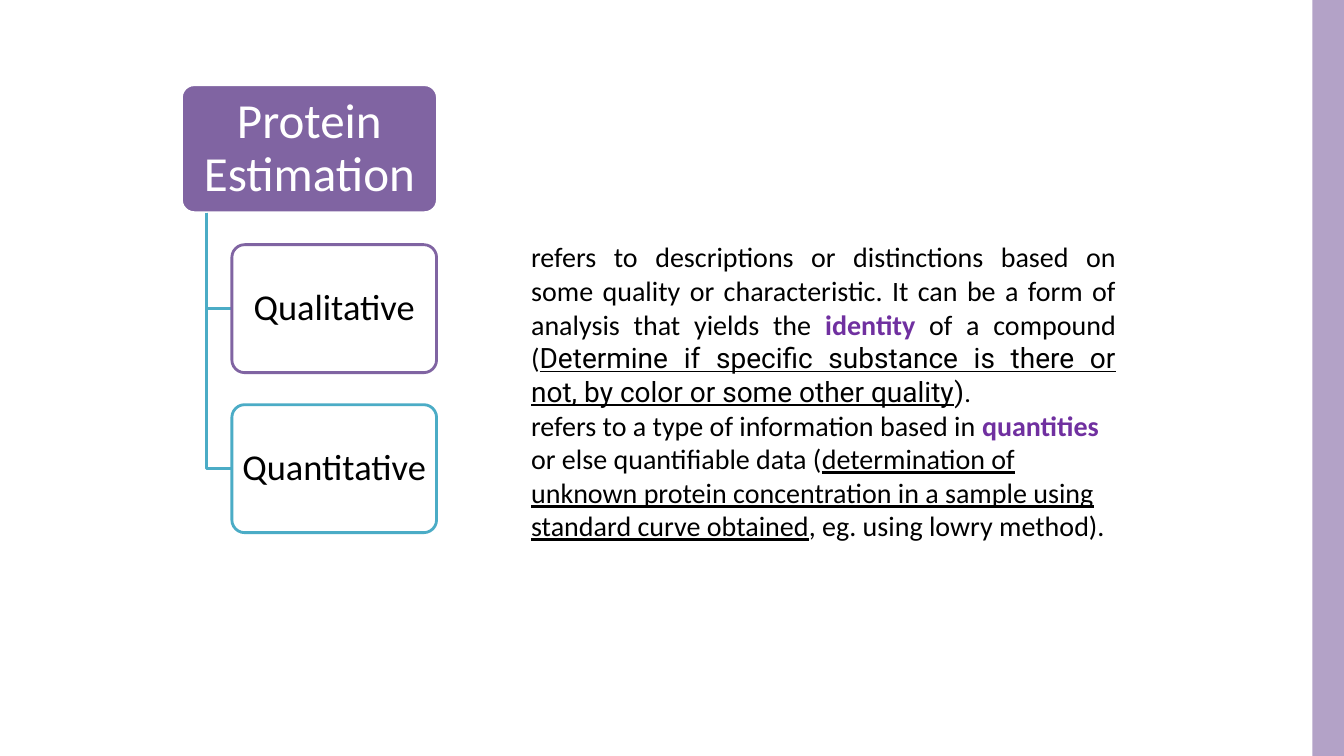
from pptx import Presentation
from pptx.dml.color import RGBColor
from pptx.enum.shapes import MSO_SHAPE
from pptx.enum.text import MSO_ANCHOR, MSO_AUTO_SIZE, PP_ALIGN
from pptx.util import Inches, Pt

PURPLE = RGBColor(0x80, 0x64, 0xA2)
LILAC = RGBColor(0xB3, 0xA2, 0xC7)
VIOLET = RGBColor(0x70, 0x30, 0xA0)
TEAL = RGBColor(0x4B, 0xAC, 0xC6)
WHITE = RGBColor(0xFF, 0xFF, 0xFF)
BLACK = RGBColor(0x00, 0x00, 0x00)


class SlideBuilder:
    """Holds the style and the slide; lengths are percent of the slide's size."""

    font = "Calibri"
    accent_font = "Roboto"
    line_width = Pt(2)

    def __init__(self, presentation):
        self.width = presentation.slide_width
        self.height = presentation.slide_height
        self.slide = presentation.slides.add_slide(presentation.slide_layouts[6])

    def point(self, x, y):
        return round(self.width * x / 100), round(self.height * y / 100)

    def frame(self, left, top, width, height):
        return *self.point(left, top), *self.point(width, height)

    def style_run(self, run, size, color, font=None):
        run.font.name = font or self.font
        run.font.size = Pt(size)
        run.font.color.rgb = color

    def bar(self, left, top, width, height, color):
        shape = self.slide.shapes.add_shape(
            MSO_SHAPE.RECTANGLE, *self.frame(left, top, width, height))
        shape.shadow.inherit = False
        shape.fill.solid()
        shape.fill.fore_color.rgb = color
        shape.line.fill.background()

    def node(self, box, text, size, fill, line, color, margins):
        shape = self.slide.shapes.add_shape(
            MSO_SHAPE.ROUNDED_RECTANGLE, *self.frame(*box))
        shape.adjustments[0] = 0.1
        shape.shadow.inherit = False
        shape.fill.solid()
        shape.fill.fore_color.rgb = fill
        shape.line.color.rgb = line
        shape.line.width = self.line_width
        text_frame = shape.text_frame
        text_frame.text = text
        text_frame.word_wrap = True
        text_frame.vertical_anchor = MSO_ANCHOR.MIDDLE
        side, edge = margins
        text_frame.margin_left = text_frame.margin_right = Inches(side)
        text_frame.margin_top = text_frame.margin_bottom = Inches(edge)
        paragraph = text_frame.paragraphs[0]
        paragraph.alignment = PP_ALIGN.CENTER
        paragraph.line_spacing = 0.9
        self.style_run(paragraph.runs[0], size, color)

    def elbow(self, left, top, right, bottom, color):
        builder = self.slide.shapes.build_freeform(*self.point(left, top), scale=1.0)
        builder.add_line_segments(
            [self.point(left, bottom), self.point(right, bottom)], close=False)
        shape = builder.convert_to_shape()
        shape.shadow.inherit = False
        shape.fill.background()
        shape.line.color.rgb = color
        shape.line.width = self.line_width

    def description(self, box, parts, alignment):
        text_frame = self.slide.shapes.add_textbox(*self.frame(*box)).text_frame
        text_frame.word_wrap = True
        text_frame.auto_size = MSO_AUTO_SIZE.SHAPE_TO_FIT_TEXT
        paragraph = text_frame.paragraphs[0]
        paragraph.alignment = alignment
        for text, kind, font in parts:
            run = paragraph.add_run()
            run.text = text
            self.style_run(run, 20, VIOLET if kind == "key" else BLACK, font)
            run.font.bold = kind == "key"
            run.font.underline = kind == "underlined"


def main():
    presentation = Presentation()
    presentation.slide_width = Inches(13.33)
    presentation.slide_height = Inches(7.5)
    builder = SlideBuilder(presentation)

    # Hierarchy: one root, branches below it at an equal pitch
    root_left, root_top, root_width, node_height = 13.5, 11.2, 19.05, 16.93
    trunk, branch_left, branch_width = 15.38, 17.25, 15.23
    pitch = node_height * 1.25
    root_bottom = root_top + node_height
    builder.node((root_left, root_top, root_width, node_height),
                 "Protein Estimation", 35, PURPLE, WHITE, WHITE, (0.07, 0.05))
    branches = [("Qualitative", PURPLE), ("Quantitative", TEAL)]
    for level, (label, outline) in enumerate(branches, start=1):
        top = root_top + level * pitch
        builder.elbow(trunk, root_bottom, branch_left, top + node_height / 2, TEAL)
        builder.node((branch_left, top, branch_width, node_height),
                     label, 26, WHITE, outline, BLACK, (0.05, 0.04))

    # Descriptions beside the branches
    text_left, text_width = 38.78, 45
    accent = builder.accent_font
    builder.description((text_left, 31.07, text_width, 19.33), [
        ("refers to descriptions or distinctions based on some quality or "
         "characteristic. It can be a form of analysis that yields the ", "plain", None),
        ("identity", "key", None),
        (" of a compound (", "plain", None),
        ("Determine if specific substance is there or not, by color or some "
         "other quality", "underlined", accent),
        (").", "plain", accent),
    ], PP_ALIGN.JUSTIFY)
    builder.description((text_left, 53.33, text_width, 14.8), [
        ("refers to a type of information based in ", "plain", None),
        ("quantities", "key", None),
        (" or else quantifiable data (", "plain", None),
        ("determination of unknown protein concentration in a sample using "
         "standard curve obtained", "underlined", None),
        (", eg. using lowry method).", "plain", None),
    ], PP_ALIGN.LEFT)

    # Side band
    builder.bar(97.65, 0, 2.35, 100, LILAC)

    presentation.save("out.pptx")


if __name__ == "__main__":
    main()
